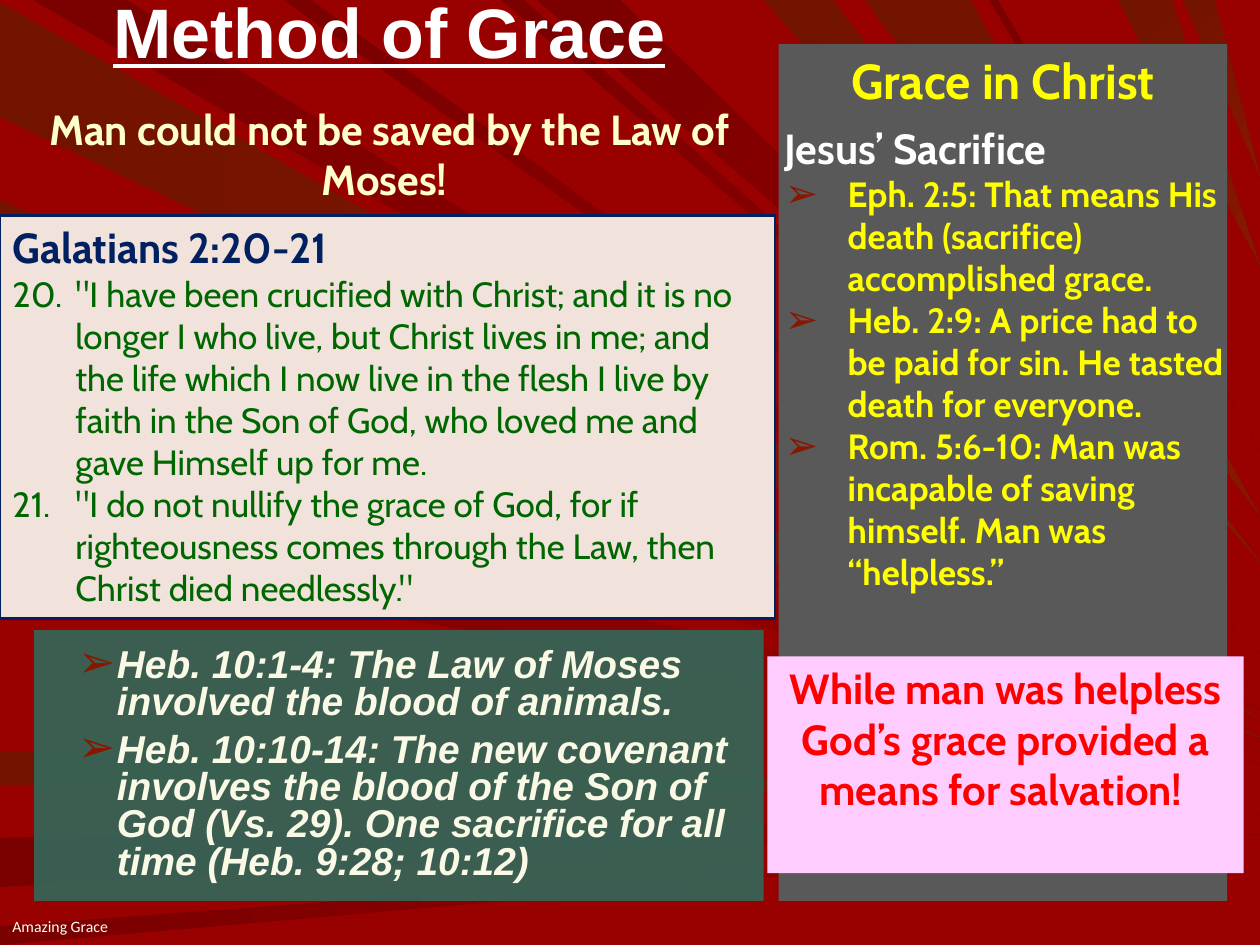
from lxml import etree
from pptx import Presentation
from pptx.dml.color import RGBColor
from pptx.enum.shapes import MSO_SHAPE
from pptx.enum.text import MSO_ANCHOR, PP_ALIGN
from pptx.oxml.ns import qn
from pptx.util import Pt

PX = 9144
WIDTH, HEIGHT = 1000, 750
RECT = MSO_SHAPE.RECTANGLE
TOP, MIDDLE = MSO_ANCHOR.TOP, MSO_ANCHOR.MIDDLE
LEFT, CENTER = PP_ALIGN.LEFT, PP_ALIGN.CENTER
COLORS = {
    "red": "990000", "dark red": "7B0000", "brown": "881700", "dark brown": "721300",
    "pink": "FFCCFF", "teal": "366456", "gray": "595959", "beige": "F1E2DC",
    "navy": "002060", "green": "006600", "yellow": "FFFF00", "cream": "FFFFCC",
    "ivory": "FAF9E6", "white": "FFFFFF", "footer": "FCFCF2", "alert": "FF0000",
}


def rgb(color):
    return RGBColor.from_string(COLORS[color])


def add_xml(parent, tag, **attrs):
    return etree.SubElement(parent, qn(tag), {k: str(v) for k, v in attrs.items()})


prs = Presentation()
prs.slide_width, prs.slide_height = WIDTH * PX, HEIGHT * PX
s = prs.slides.add_slide(prs.slide_layouts[6])
s.background.fill.solid()
s.background.fill.fore_color.rgb = rgb("red")

rays = [
    ("left", "brown", 2, 93, 570),
    ("top", "red", 26, 101, 563),
    ("left", "brown", 596, 623, 632),
    ("left", "red", 665, 704, 647),
    ("left", "red", 735, 750, 662),
    ("left", "red", 258, 270, 589),
    ("left", "brown", 159, 228, 585),
    ("top", "red", 398, 416, 518),
    ("top", "red", 426, 492, 493),
    ("top", "brown", 606, 661, 446),
    ("top", "brown", 887, 930, 210),
    ("top", "brown", 939, 964, 140),
    ("left", "red", 278, 342, 599),
    ("left", "red", 374, 437, 606),
    ("top", "red", 225, 247, 550),
    ("top", "brown", 686, 770, 409),
    ("top", "red", 785, 792, 357),
]
grp = s.shapes.add_group_shape()
for side, color, start, end, tip in rays:
    base = [(0, start), (0, end)] if side == "left" else [(start, 0), (end, 0)]
    fb = grp.shapes.build_freeform(*base[0], scale=PX)
    fb.add_line_segments([base[1], (WIDTH, tip)], close=True)
    sp = fb.convert_to_shape()
    sp.shadow.inherit = False
    sp.line.fill.background()
    sp.fill.gradient()
    sp.fill.gradient_angle = 360 if side == "left" else 315
    for stop, name in zip(sp.fill.gradient_stops, ("dark " + color, color)):
        stop.color.rgb = rgb(name)

heading = {"size": Pt(24), "name": "Cabin", "bold": True}
point = heading | {"size": Pt(20)}
verse = point | {"bold": False}
scripture = {"size": Pt(22.2), "name": "Arial", "bold": True, "italic": True}
title = {"size": Pt(40), "name": "Arial", "bold": True, "underline": True}
centered = {"alignment": CENTER}
tight = {"line_spacing": 0.8, "space_after": Pt(6)}
hang = (50, -50)
short_hang = (56, -31)

boxes = [
    ((27, 500, 579, 215), "teal", TOP, []),
    ((0, 720, 541, 30), None, MIDDLE, [
        ("Amazing Grace", "footer", {"size": Pt(9), "name": "Calibri"}, {"space_after": Pt(6)}, None, None)]),
    ((618, 35, 356, 680), "gray", TOP, []),
    ((618, 35, 356, 57), None, MIDDLE, [
        ("Grace in Christ", "yellow", heading | {"size": Pt(28)}, centered, hang, None)]),
    ((0, 0, 618, 57), None, MIDDLE, [
        ("Method of Grace", "white", title, centered | {"line_spacing": 0.9}, None, None)]),
    ((613, 92, 370, 421), None, TOP, [
        ("Jesus’ Sacrifice", "white", heading, {}, None, None),
        ("Eph. 2:5: That means His death (sacrifice) accomplished grace.", "yellow", point, {}, hang, "➢"),
        ("Heb. 2:9: A price had to be paid for sin. He tasted death for everyone.", "yellow", point, {}, hang, "➢"),
        ("Rom. 5:6-10: Man was incapable of saving himself. Man was “helpless.”", "yellow", point, {}, hang, "➢")]),
    ((0, 171, 615, 320), "beige", TOP, [
        ("Galatians 2:20-21", "navy", heading, {}, hang, None),
        ('"I have been crucified with Christ; and it is no longer I who live, but Christ lives in me; '
         "and the life which I now live in the flesh I live by faith in the Son of God, who loved me "
         'and gave Himself up for me.', "green", verse, {}, hang, 20),
        ('"I do not nullify the grace of God, for if righteousness comes through the Law, '
         'then Christ died needlessly."', "green", verse, {}, hang, 20)]),
    ((0, 77, 618, 91), None, TOP, [
        ("Man could not be saved by the Law of Moses! ", "cream", heading, centered, None, None)]),
    ((27, 500, 579, 215), None, MIDDLE, [
        ("Heb. 10:1-4: The Law of Moses involved the blood of animals.",
         "ivory", scripture, tight, short_hang, "➢"),
        ("Heb. 10:10-14: The new covenant involves the blood of the Son of God (Vs. 29). "
         "One sacrifice for all time (Heb. 9:28; 10:12)", "ivory", scripture, tight, short_hang, "➢")]),
    ((609, 521, 378, 172), "pink", TOP, [
        ("While man was helpless God’s grace provided a means for salvation! ",
         "alert", heading, centered, None, None)]),
]
for bounds, fill, anchor, paragraphs in boxes:
    bounds = [v * PX for v in bounds]
    if fill:
        sp = s.shapes.add_shape(RECT, *bounds)
        sp.shadow.inherit = False
        sp.fill.solid()
        sp.fill.fore_color.rgb = rgb(fill)
        sp.line.fill.background()
        if fill == "beige":
            sp.line.color.rgb = rgb("navy")
            sp.line.width = Pt(1.5)
        if fill == "teal":
            add_xml(sp._element.spPr.find(".//" + qn("a:srgbClr")), "a:alpha", val=95000)
    else:
        sp = s.shapes.add_textbox(*bounds)
    tf = sp.text_frame
    tf.word_wrap = True
    tf.vertical_anchor = anchor
    for i, (text, color, font, layout, indent, bullet) in enumerate(paragraphs):
        p = tf.add_paragraph() if i else tf.paragraphs[0]
        for key, value in ({"alignment": LEFT} | layout).items():
            setattr(p, key, value)
        r = p.add_run()
        r.text = text
        r.font.color.rgb = rgb(color)
        for key, value in font.items():
            setattr(r.font, key, value)
        pPr = p._p.get_or_add_pPr()
        if indent:
            pPr.set("marL", str(indent[0] * PX))
            pPr.set("indent", str(indent[1] * PX))
        if bullet == "➢":
            add_xml(add_xml(pPr, "a:buClr"), "a:srgbClr", val=COLORS["brown"])
            add_xml(pPr, "a:buSzPct", val=115000)
            add_xml(pPr, "a:buFont", typeface="Arial")
            add_xml(pPr, "a:buChar", char=bullet)
        elif bullet:
            add_xml(pPr, "a:buFont", typeface="+mj-lt")
            add_xml(pPr, "a:buAutoNum", type="arabicPeriod", startAt=bullet)

prs.save("out.pptx")
